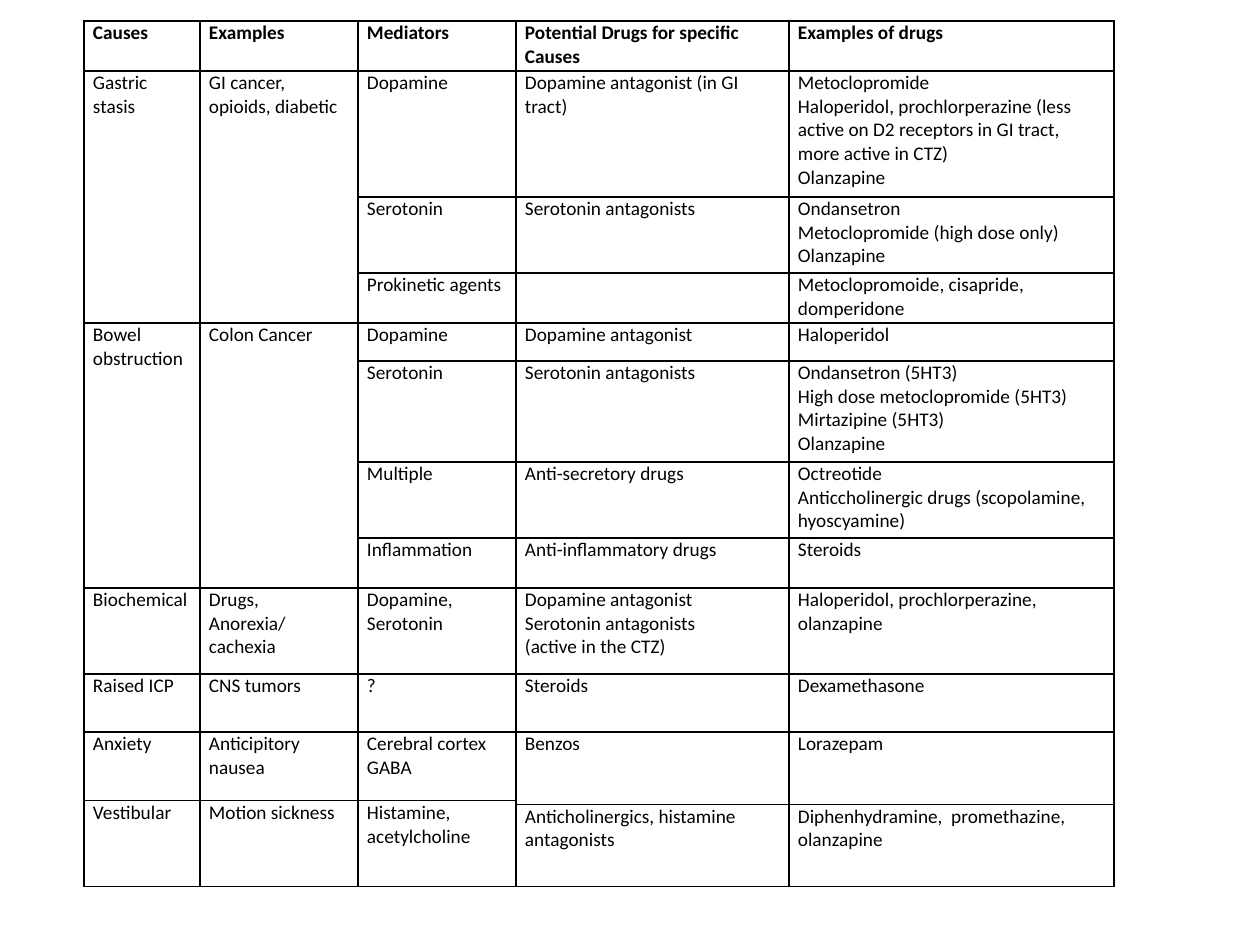
from lxml.etree import SubElement
from pptx import Presentation
from pptx.dml.color import RGBColor
from pptx.oxml.ns import qn
from pptx.util import Pt

SCALE = 914400 / 126
COLORS = {"ink": "000000", "paper": "FFFFFF"}
FONT = "Calibri"
COLUMNS = [116, 158, 158, 273, 325]
HEIGHTS = [50, 126, 76, 50, 38, 101, 76, 50, 86, 58, 69, 4, 82]
UP = None
ROWS = [
    ["Causes", "Examples", "Mediators", "Potential Drugs for specific Causes", "Examples of drugs"],
    ["Gastric stasis", "GI cancer, opioids, diabetic", "Dopamine", "Dopamine antagonist (in GI tract)",
     "Metoclopromide\nHaloperidol, prochlorperazine (less active on D2 receptors in GI tract, "
     "more active in CTZ)\nOlanzapine"],
    [UP, UP, "Serotonin", "Serotonin antagonists",
     "Ondansetron\nMetoclopromide (high dose only)\nOlanzapine"],
    [UP, UP, "Prokinetic agents", "", "Metoclopromoide, cisapride, domperidone"],
    ["Bowel obstruction", "Colon Cancer", "Dopamine", "Dopamine antagonist", "Haloperidol"],
    [UP, UP, "Serotonin", "Serotonin antagonists",
     "Ondansetron (5HT3)\nHigh dose metoclopromide (5HT3)\nMirtazipine (5HT3)\nOlanzapine"],
    [UP, UP, "Multiple", "Anti-secretory drugs",
     "Octreotide\nAnticcholinergic drugs (scopolamine, hyoscyamine)"],
    [UP, UP, "Inflammation", "Anti-inflammatory drugs", "Steroids"],
    ["Biochemical", "Drugs,\nAnorexia/\ncachexia", "Dopamine, Serotonin",
     "Dopamine antagonist\nSerotonin antagonists\n(active in the CTZ)",
     "Haloperidol, prochlorperazine, olanzapine"],
    ["Raised ICP", "CNS tumors", "?", "Steroids", "Dexamethasone"],
    ["Anxiety", "Anticipitory nausea", "Cerebral cortex\nGABA", "Benzos", "Lorazepam"],
    ["Vestibular", "Motion sickness", "Histamine, acetylcholine", UP, UP],
    [UP, UP, UP, "Anticholinergics, histamine antagonists", "Diphenhydramine,  promethazine, olanzapine"],
]


def px(n):
    return round(n * SCALE)


def rgb(name):
    return RGBColor.from_string(COLORS[name])


def add_borders(cell):
    tc_pr = cell._tc.get_or_add_tcPr()
    for i, side in enumerate(("lnL", "lnR", "lnT", "lnB")):
        ln = SubElement(tc_pr, qn(f"a:{side}"), w=str(Pt(1)))
        fill = SubElement(ln, qn("a:solidFill"))
        SubElement(fill, qn("a:srgbClr"), val=COLORS["ink"])
        tc_pr.insert(i, ln)


def format_cell(cell, text, bold):
    cell.margin_left = cell.margin_right = px(9)
    cell.margin_top = cell.margin_bottom = 0
    cell.fill.solid()
    cell.fill.fore_color.rgb = rgb("paper")
    add_borders(cell)
    cell.text_frame.text = text
    for p in cell.text_frame.paragraphs:
        p.font.name = FONT
        p.font.size = Pt(11)
        p.font.bold = bold
        p.font.color.rgb = rgb("ink")


def merge_down(table, r, c):
    last = r
    while last + 1 < len(ROWS) and ROWS[last + 1][c] is UP:
        last += 1
    if last > r:
        table.cell(r, c).merge(table.cell(last, c))


def add_drug_table(s):
    frame = s.shapes.add_table(len(ROWS), len(COLUMNS), px(84), px(21),
                               px(sum(COLUMNS)), px(sum(HEIGHTS)))
    table = frame.table
    table.first_row = table.horz_banding = False
    for column, width in zip(table.columns, COLUMNS):
        column.width = px(width)
    for row, height in zip(table.rows, HEIGHTS):
        row.height = px(height)
    for r, texts in enumerate(ROWS):
        for c, text in enumerate(texts):
            format_cell(table.cell(r, c), text or "", r == 0)
            if text is not UP:
                merge_down(table, r, c)


def main():
    prs = Presentation()
    prs.slide_width, prs.slide_height = px(1260), px(945)
    s = prs.slides.add_slide(prs.slide_layouts[6])
    add_drug_table(s)
    prs.save("out.pptx")


if __name__ == "__main__":
    main()
